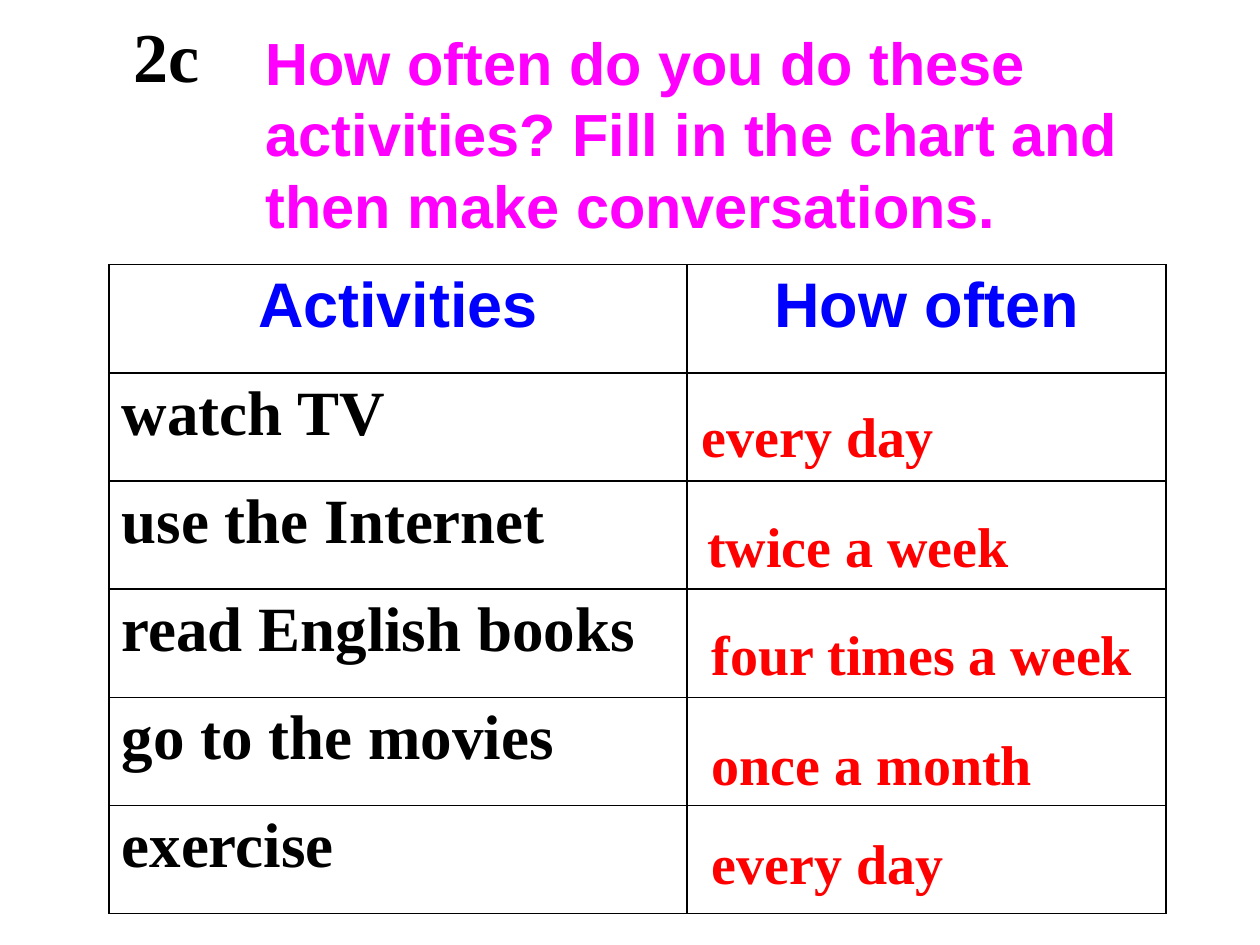
from dataclasses import dataclass

from lxml.etree import SubElement
from pptx import Presentation
from pptx.dml.color import RGBColor
from pptx.enum.shapes import MSO_SHAPE
from pptx.enum.text import MSO_ANCHOR, MSO_AUTO_SIZE, PP_ALIGN
from pptx.oxml.ns import qn
from pptx.util import Pt

COLORS = {
    "prompt": "FF00FF",
    "heading": "0000FF",
    "text": "000000",
    "answer": "FF0000",
    "paper": "FFFFFF",
}
SERIF = "Times New Roman"
SANS = "Arial"


@dataclass(frozen=True)
class Style:
    font: str
    size: float
    color: str
    align: PP_ALIGN = PP_ALIGN.LEFT
    line: float | None = None


@dataclass(frozen=True)
class Answer:
    text: str
    left: float
    top: float
    width: float


PROMPT = Style(SANS, 34, "prompt", line=40.9)
LABEL = Style(SERIF, 40, "text", PP_ALIGN.CENTER)
HEADING = Style(SANS, 36, "heading", PP_ALIGN.CENTER)
ACTIVITY = Style(SERIF, 36, "text")
ANSWER = Style(SERIF, 32, "answer", line=38.2)

HEADINGS = ["Activities", "How often"]
ACTIVITIES = [
    "watch TV",
    "use the Internet",
    "read English books",
    "go to the movies",
    "exercise",
]
ANSWERS = [
    Answer("every day", 394, 224.6, 175.7),
    Answer("twice a week", 397, 287.3, 226.8),
    Answer("four times a week", 399.6, 349.2, 260.6),
    Answer("once a month", 399.6, 411.8, 249.8),
    Answer("every day", 399.6, 468.7, 181.4),
]
COLUMN_WIDTHS = [330.3, 273.8]
ROW_HEIGHT = 61.85


def rgb(name: str) -> RGBColor:
    return RGBColor.from_string(COLORS[name])


def apply(target, formats: dict) -> None:
    for name, value in formats.items():
        setattr(target, name, value)


def write(frame, text: str, style: Style) -> None:
    paragraph = frame.paragraphs[0]
    paragraph.alignment = style.align
    if style.line:
        paragraph.line_spacing = Pt(style.line)
    span = paragraph.add_run()
    span.text = text
    apply(span.font, {"name": style.font, "size": Pt(style.size), "bold": True})
    span.font.color.rgb = rgb(style.color)


def add_prompt(page) -> None:
    box = page.shapes.title
    apply(box, {"left": Pt(144.7), "top": Pt(10.1), "width": Pt(532.8), "height": Pt(129.6)})
    apply(box.text_frame, {
        "word_wrap": True,
        "vertical_anchor": MSO_ANCHOR.TOP,
        "auto_size": MSO_AUTO_SIZE.NONE,
        "margin_top": Pt(4.6),
    })
    write(
        box.text_frame,
        "How often do you do these activities? Fill in the chart and then make conversations.",
        PROMPT,
    )


def add_label(page) -> None:
    box = page.shapes.add_shape(MSO_SHAPE.OVAL, Pt(59.8), Pt(3.6), Pt(70.6), Pt(55.4))
    box.shadow.inherit = False
    box.fill.background()
    box.line.fill.background()
    apply(box.text_frame, {"word_wrap": False, "vertical_anchor": MSO_ANCHOR.MIDDLE})
    write(box.text_frame, "2c", LABEL)


def format_cell(cell) -> None:
    properties = cell._tc.get_or_add_tcPr()
    for side in ("a:lnL", "a:lnR", "a:lnT", "a:lnB"):
        border = SubElement(properties, qn(side), w=str(Pt(1)))
        fill = SubElement(border, qn("a:solidFill"))
        SubElement(fill, qn("a:srgbClr"), val=COLORS["text"])
    cell.fill.solid()
    cell.fill.fore_color.rgb = rgb("paper")


def add_chart_table(page) -> None:
    rows = len(ACTIVITIES) + 1
    table = page.shapes.add_table(
        rows, len(HEADINGS), Pt(62.3), Pt(151.2), Pt(sum(COLUMN_WIDTHS)), Pt(ROW_HEIGHT * rows)
    ).table
    apply(table, {"first_row": False, "horz_banding": False})
    for column, width in zip(table.columns, COLUMN_WIDTHS):
        column.width = Pt(width)
    for row in table.rows:
        row.height = Pt(ROW_HEIGHT)
    for cell in table.iter_cells():
        format_cell(cell)
    for index, heading in enumerate(HEADINGS):
        write(table.cell(0, index).text_frame, heading, HEADING)
    for index, activity in enumerate(ACTIVITIES, start=1):
        write(table.cell(index, 0).text_frame, activity, ACTIVITY)


def add_answer(page, answer: Answer) -> None:
    box = page.shapes.add_textbox(
        Pt(answer.left), Pt(answer.top), Pt(answer.width), Pt(45.4)
    )
    apply(box.text_frame, {
        "word_wrap": True,
        "auto_size": MSO_AUTO_SIZE.NONE,
        "margin_top": Pt(5.2),
    })
    write(box.text_frame, answer.text, ANSWER)


def main() -> None:
    deck = Presentation()
    apply(deck, {"slide_width": Pt(720), "slide_height": Pt(540)})
    page = deck.slides.add_slide(deck.slide_layouts.get_by_name("Title Only"))
    add_prompt(page)
    add_label(page)
    add_chart_table(page)
    for answer in ANSWERS:
        add_answer(page, answer)
    deck.save("out.pptx")


if __name__ == "__main__":
    main()
